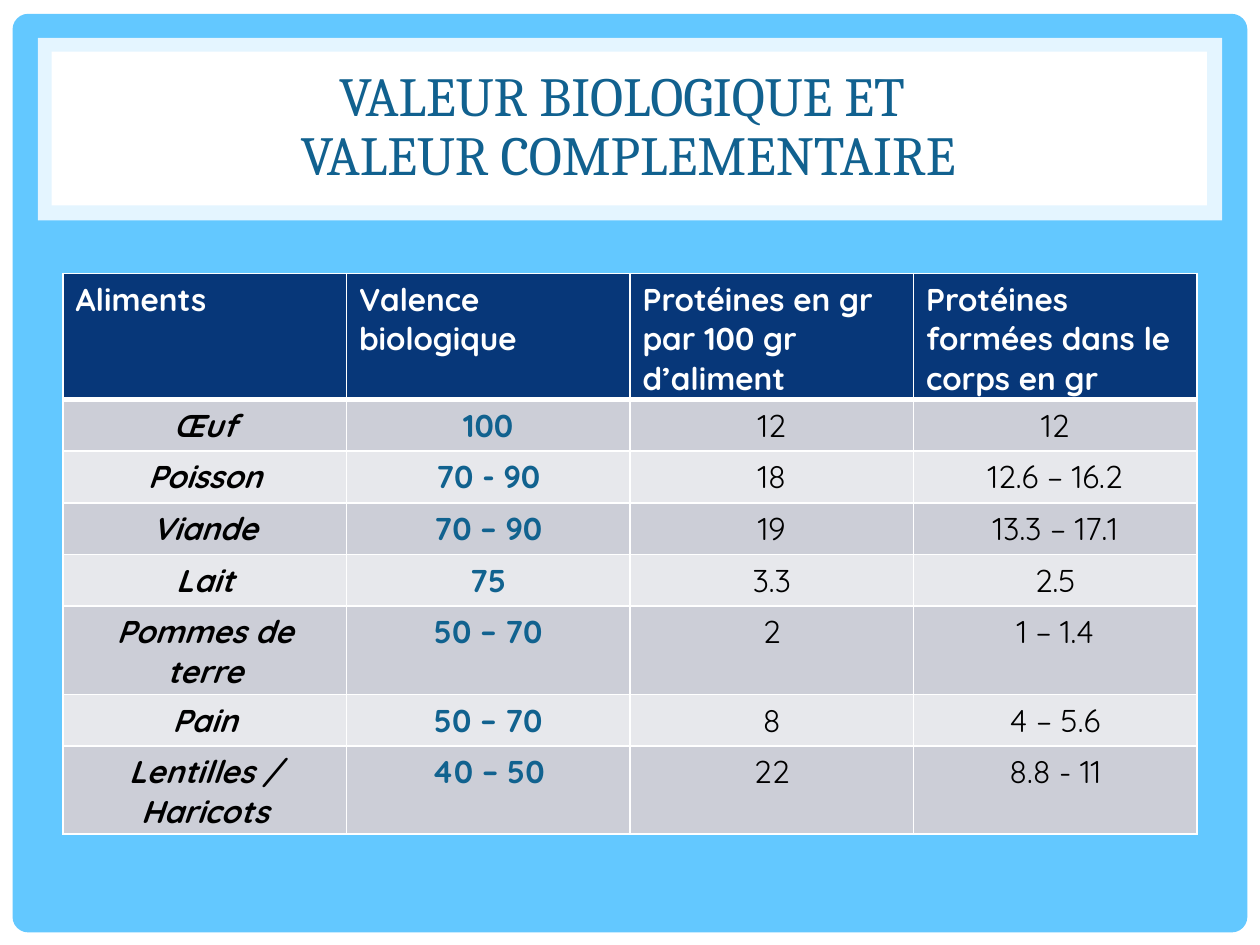
from pptx import Presentation
from pptx.dml.color import RGBColor
from pptx.enum.shapes import MSO_SHAPE as Shape
from pptx.enum.text import MSO_ANCHOR as Anchor, PP_ALIGN as Align
from pptx.oxml.ns import qn
from pptx.util import Inches, Pt
from lxml.etree import SubElement

BLUE, WHITE, BLACK = "63C8FF", "FFFFFF", "000000"
NAVY, BANDS = "073779", ("CCCED7", "E7E8EC")

HEADER = ("Aliments", "Valence biologique", "Protéines en gr par 100 gr d’aliment",
          "Protéines formées dans le corps en gr")
FOODS = (
    ("Œuf", "100", "12", "12"),
    ("Poisson", "70 - 90", "18", "12.6 – 16.2"),
    ("Viande", "70 – 90", "19", "13.3 – 17.1"),
    ("Lait", "75", "3.3", "2.5"),
    ("Pommes de terre", "50 – 70", "2", "1 – 1.4"),
    ("Pain", "50 – 70", "8", "4 – 5.6"),
    ("Lentilles / Haricots", "40 – 50", "22", "8.8 - 11"),
)

# Font formats: header row, then one per body column
HEADER_FORMAT = {"color": WHITE, "bold": True}
NUMBER_FORMAT = {"color": BLACK, "bold": False}
COLUMN_FORMATS = (
    {"color": BLACK, "bold": True, "italic": True},
    {"color": "11628F", "bold": True},
    NUMBER_FORMAT,
    NUMBER_FORMAT,
)
TABLE_FONT = {"name": "Quicksand", "size": Pt(18)}
TITLE_FORMAT = {"name": "Cambria", "size": Pt(31.5), "color": "11618F"}


def paint(fill, color):
    fill.solid()
    fill.fore_color.rgb = RGBColor.from_string(color)


def write(frame, text, formats, align):
    paragraph = frame.paragraphs[0]
    paragraph.text = text
    paragraph.alignment = align
    for run in paragraph.runs:
        for name, value in formats.items():
            if name == "color":
                run.font.color.rgb = RGBColor.from_string(value)
            else:
                setattr(run.font, name, value)
    return paragraph


def add_panel(slide, kind, box, color, opacity=100):
    shape = slide.shapes.add_shape(kind, *map(Inches, box))
    shape.shadow.inherit = False
    shape.line.fill.background()
    paint(shape.fill, color)
    if opacity < 100:
        color_node = shape.fill._xPr.find(qn("a:solidFill"))[0]
        SubElement(color_node, qn("a:alpha"), val=str(opacity * 1000))
    return shape


def add_title(slide, box, text):
    frame = slide.shapes.add_textbox(*map(Inches, box)).text_frame
    frame.word_wrap = True
    frame.vertical_anchor = Anchor.MIDDLE
    write(frame, text, TITLE_FORMAT, Align.CENTER).line_spacing = 0.88


def set_borders(cell, widths):
    properties = cell._tc.get_or_add_tcPr()
    for side, width in zip("LRTB", widths):
        line = SubElement(properties, qn(f"a:ln{side}"), w=str(Pt(width)))
        SubElement(SubElement(line, qn("a:solidFill")), qn("a:srgbClr"), val=WHITE)


def fill_cell(cell, text, formats, align, color, borders):
    set_borders(cell, borders)
    paint(cell.fill, color)
    write(cell.text_frame, text, TABLE_FONT | formats, align)


def add_food_table(slide, left, top, column_width, row_height):
    rows, columns = len(FOODS) + 1, len(HEADER)
    table = slide.shapes.add_table(
        rows, columns, Inches(left), Inches(top),
        Inches(column_width * columns), Inches(row_height * rows)).table
    for column in table.columns:
        column.width = Inches(column_width)
    for row in table.rows:
        row.height = Inches(row_height)

    # Header row, with a thick line below it
    for index, text in enumerate(HEADER):
        fill_cell(table.cell(0, index), text, HEADER_FORMAT, Align.LEFT, NAVY, (1, 1, 1, 3))

    # Banded body rows
    for row_index, food in enumerate(FOODS, start=1):
        band = BANDS[(row_index - 1) % 2]
        borders = (1, 1, 3 if row_index == 1 else 1, 1)
        for index, (text, formats) in enumerate(zip(food, COLUMN_FORMATS)):
            fill_cell(table.cell(row_index, index), text, formats, Align.CENTER, band, borders)


def main():
    presentation = Presentation()
    presentation.slide_width, presentation.slide_height = Inches(10), Inches(7.5)
    slide = presentation.slides.add_slide(presentation.slide_layouts[6])

    # White margin around a rounded blue area
    paint(slide.background.fill, BLUE)
    add_panel(slide, Shape.RECTANGLE, (0, 0, 10, 7.5), WHITE)
    area = add_panel(slide, Shape.ROUNDED_RECTANGLE, (0.1, 0.11, 9.8, 7.29), BLUE)
    area.adjustments[0] = 0.017

    # Title plate with its translucent frame
    add_panel(slide, Shape.RECTANGLE, (0.3, 0.3, 9.4, 1.45), WHITE, opacity=83)
    add_panel(slide, Shape.RECTANGLE, (0.41, 0.41, 9.17, 1.22), WHITE)
    add_title(slide, (0.47, 0.45, 9.03, 1.14), "VALEUR BIOLOGIQUE ET \vVALEUR COMPLEMENTAIRE")

    add_food_table(slide, 0.5, 2.17, column_width=2.25, row_height=0.41)
    presentation.save("out.pptx")


if __name__ == "__main__":
    main()
